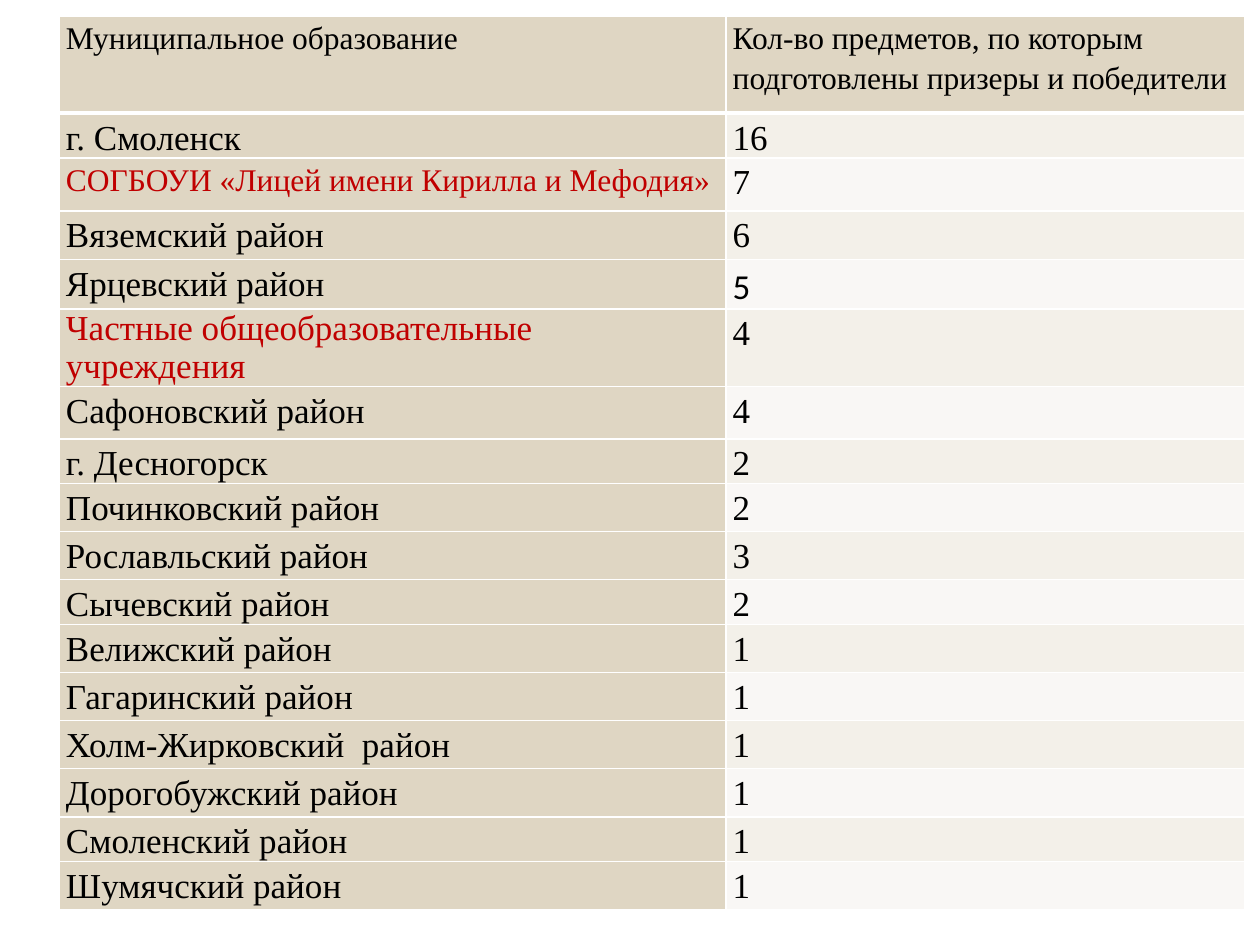
from dataclasses import dataclass

from lxml.etree import SubElement
from pptx import Presentation
from pptx.dml.color import RGBColor as RGB
from pptx.oxml.ns import qn
from pptx.util import Cm, Pt


@dataclass(frozen=True)
class Theme:
    font: str = "Times New Roman"
    alt_font: str = "Calibri"
    small: int = 18
    body: int = 20
    text: str = "000000"
    accent: str = "C00000"
    label_fill: str = "DFD6C3"
    bands: tuple = ("F3F0E9", "F9F7F5")
    border: str = "FFFFFF"
    thin: int = 1
    thick: int = 3
    spacing: float = 1.15


T = Theme()

HEADER = ("Муниципальное образование",
          "Кол-во предметов, по которым подготовлены призеры и победители")
HEADER_HEIGHT = 1.95

# name, number of subjects, row height in cm
ROWS = [
    ("г. Смоленск", 16, 0.9),
    ("СОГБОУИ «Лицей имени Кирилла и Мефодия»", 7, 1.07),
    ("Вяземский район", 6, 0.98),
    ("Ярцевский район", 5, 0.98),
    ("Частные общеобразовательные учреждения", 4, 1.57),
    ("Сафоновский район", 4, 1.05),
    ("г. Десногорск", 2, 0.9),
    ("Починковский район", 2, 0.97),
    ("Рославльский район", 3, 0.97),
    ("Сычевский район", 2, 0.9),
    ("Велижский район", 1, 0.97),
    ("Гагаринский район", 1, 0.97),
    ("Холм-Жирковский  район", 1, 0.97),
    ("Дорогобужский район", 1, 0.97),
    ("Смоленский район", 1, 0.9),
    ("Шумячский район", 1, 0.97),
]

# Cells that differ from the rest of the table, by their text
LABEL_STYLES = {
    "СОГБОУИ «Лицей имени Кирилла и Мефодия»": {"size": T.small, "color": T.accent},
    "Частные общеобразовательные учреждения": {"color": T.accent, "spacing": 1.0},
}
VALUE_STYLES = {"Ярцевский район": {"font": T.alt_font}}

LEFT, TOP = 1.2, 0.33
COLUMNS = (13.44, 10.46)


def add_borders(cell, top, bottom):
    tc_pr = cell._tc.get_or_add_tcPr()
    for side, width in (("L", T.thin), ("R", T.thin), ("T", top), ("B", bottom)):
        ln = SubElement(tc_pr, qn(f"a:ln{side}"), w=str(Pt(width)))
        SubElement(SubElement(ln, qn("a:solidFill")), qn("a:srgbClr"), val=T.border)


def fill_cell(cell, text, fill, size=T.body, color=T.text, font=T.font,
              spacing=T.spacing, top=T.thin, bottom=T.thin):
    add_borders(cell, top, bottom)
    cell.fill.solid()
    cell.fill.fore_color.rgb = RGB.from_string(fill)
    cell.margin_left = cell.margin_right = Cm(0.13)
    cell.margin_top = cell.margin_bottom = 0
    p = cell.text_frame.paragraphs[0]
    p.line_spacing = spacing
    r = p.add_run()
    r.text = text
    r.font.name = font
    r.font.size = Pt(size)
    r.font.color.rgb = RGB.from_string(color)


def main():
    prs = Presentation()
    prs.slide_width, prs.slide_height = Cm(25.4), Cm(19.05)
    slide = prs.slides.add_slide(prs.slide_layouts[6])

    heights = [HEADER_HEIGHT] + [height for _, _, height in ROWS]
    table = slide.shapes.add_table(
        len(heights), len(COLUMNS), Cm(LEFT), Cm(TOP),
        Cm(sum(COLUMNS)), Cm(sum(heights))).table
    table.first_row = table.horz_banding = False
    for column, width in zip(table.columns, COLUMNS):
        column.width = Cm(width)
    for row, height in zip(table.rows, heights):
        row.height = Cm(height)

    for col, title in enumerate(HEADER):
        fill_cell(table.cell(0, col), title, T.label_fill,
                  size=T.small, bottom=T.thick)
    for i, (name, count, _) in enumerate(ROWS):
        top = T.thin if i else T.thick
        fill_cell(table.cell(i + 1, 0), name, T.label_fill, top=top,
                  **LABEL_STYLES.get(name, {}))
        fill_cell(table.cell(i + 1, 1), str(count), T.bands[i % 2], top=top,
                  **VALUE_STYLES.get(name, {}))

    prs.save("out.pptx")


if __name__ == "__main__":
    main()
